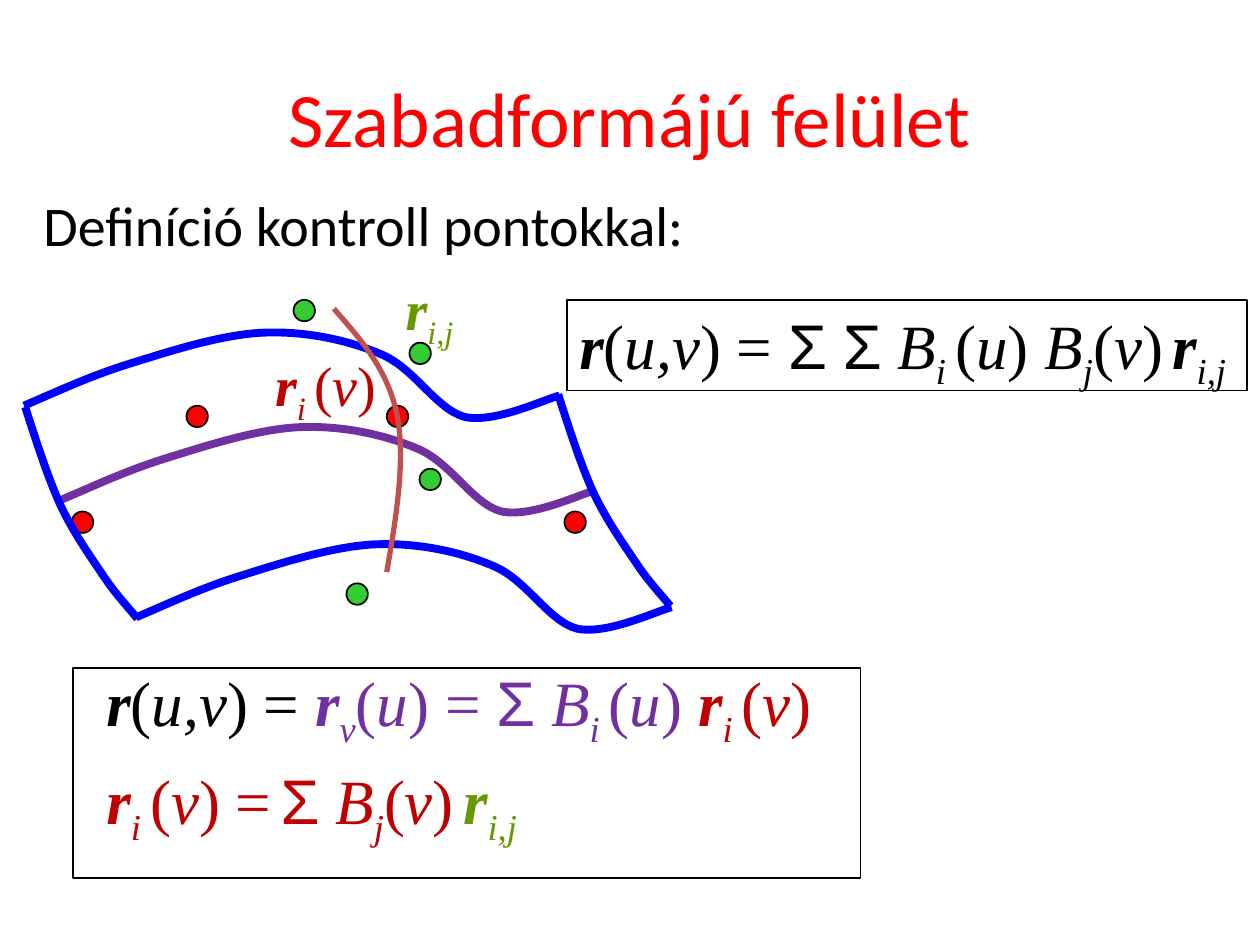
from dataclasses import dataclass

from pptx import Presentation
from pptx.dml.color import RGBColor
from pptx.enum.shapes import MSO_SHAPE as Shape
from pptx.enum.text import MSO_ANCHOR as Anchor, MSO_AUTO_SIZE as AutoSize, PP_ALIGN as Align
from pptx.oxml.ns import qn
from pptx.util import Inches, Pt


@dataclass(frozen=True)
class Theme:
    black: str = "000000"
    title: str = "FF0000"
    edge: str = "0000FF"
    row: str = "7030A0"
    column: str = "C0504D"
    curve_point: str = "C00000"
    control_point: str = "669900"
    red_dot: str = "FF0000"
    green_dot: str = "33CC33"
    body_font: str = "Calibri"
    math_font: str = "Times New Roman"
    sum_font: str = "Arial"
    title_size: int = 44
    body_size: int = 32
    formula_size: int = 36


THEME = Theme()

# Grid of 100 columns and 75 rows
WIDTH, HEIGHT = Inches(10), Inches(7.5)
COLUMN, ROW = WIDTH / 100, HEIGHT / 75
DOT = 1.7

# Bezier knots relative to the start of each curve, in columns and rows
ACROSS = [(2.6, -1.1), (5.1, -2.3), (8.3, -3.3), (11.5, -4.3), (15.8, -5.7),
          (19.2, -5.8), (22.5, -5.9), (25.7, -5.2), (28.3, -4.1), (31, -3),
          (32.7, 0.3), (35, 0.9), (37.4, 1.4), (41.3, -0.5), (42.5, -0.8)]
DOWN = [(0.9, 2.8), (1.8, 5.6), (2.8, 7.8), (3.9, 10.1), (5.2, 11.9),
        (6.2, 13.4), (7.2, 14.9), (8.1, 15.8), (8.9, 16.8)]
CROSSING = [(2.2, 2.5), (4.3, 4.9), (5, 8.4), (5.7, 11.8), (5, 16.3), (4.2, 20.9)]

RED_DOTS = [(5.7, 40.6), (14.8, 32.2), (30.7, 32.2), (44.8, 40.6)]
GREEN_DOTS = [(23.3, 23.8), (32.5, 27.2), (33.3, 37.2), (27.5, 46.3)]


# Formula parts: lists of (text, style, colour); b bold, i italic, _ subscript, s sum sign
def vector(index, colour):
    return [("r", "bi", colour), (index, "i_", colour)]


def argument(name, colour, after=""):
    return [("(", "", colour), (name, "i", colour), (")" + after, "", colour)]


def basis(index, name, colour, after=" "):
    return [("B", "i", colour), (index, "i_", colour)] + argument(name, colour, after)


def surface():
    return [("r", "bi", THEME.black)] + argument("u,v", THEME.black, " = ")


def sum_sign(colour):
    return [("Σ", "s", colour), (" ", "", colour)]


def thin_space(colour):
    return [(" ", "_", colour)]


def color(code):
    return RGBColor.from_string(code)


def place(shape, left, top, width, height):
    shape.left, shape.top = round(left * COLUMN), round(top * ROW)
    shape.width, shape.height = round(width * COLUMN), round(height * ROW)


def outline(shape, code, width):
    shape.shadow.inherit = False
    shape.line.color.rgb = color(code)
    shape.line.width = Pt(width)


def format_span(span, font, size, code):
    span.font.name, span.font.size = font, Pt(size)
    span.font.color.rgb = color(code)


def write_formula(para, parts, size):
    for text, style, code in parts:
        span = para.add_run()
        span.text = text
        format_span(span, THEME.sum_font if "s" in style else THEME.math_font, size, code)
        span.font.bold, span.font.italic = "b" in style, "i" in style
        if "_" in style:
            span.font._element.set("baseline", "-25000")


def remove_bullet(para, indent=0):
    properties = para._p.get_or_add_pPr()
    properties.set("marL", str(Inches(indent)))
    properties.set("indent", "0")
    properties.insert_element_before(
        properties.makeelement(qn("a:buNone"), {}), "a:tabLst", "a:defRPr", "a:extLst")


def add_frame(page, *cell):
    frame = page.shapes.add_shape(Shape.RECTANGLE, 0, 0, 0, 0)
    place(frame, *cell)
    frame.fill.background()
    outline(frame, THEME.black, 1)
    return frame


def fill_frame(box, parts, size, align=Align.LEFT):
    frame = box.text_frame
    frame.word_wrap = False
    frame.auto_size = AutoSize.SHAPE_TO_FIT_TEXT
    frame.vertical_anchor = Anchor.TOP
    frame.paragraphs[0].alignment = align
    write_formula(frame.paragraphs[0], parts, size)


def add_label(page, cell, parts, align=Align.LEFT):
    box = page.shapes.add_textbox(0, 0, 0, 0)
    place(box, *cell)
    fill_frame(box, parts, THEME.body_size, align)


def add_dots(page, spots, code):
    for left, top in spots:
        dot = page.shapes.add_shape(Shape.OVAL, 0, 0, 0, 0)
        place(dot, left, top, DOT, DOT)
        dot.fill.solid()
        dot.fill.fore_color.rgb = color(code)
        outline(dot, THEME.black, 1)


def add_curve(page, knots, left, top, code, width=4.5):
    points = [(round((left + x) * COLUMN), round((top + y) * ROW)) for x, y in knots]
    builder = page.shapes.build_freeform(round(left * COLUMN), round(top * ROW))
    builder.add_line_segments(points, close=False)
    curve = builder.convert_to_shape()
    # Every three line segments become one cubic Bezier segment
    lines = list(curve._element.iter(qn("a:lnTo")))
    for first in range(0, len(lines), 3):
        bezier = lines[first].makeelement(qn("a:cubicBezTo"), {})
        lines[first].addprevious(bezier)
        for line in lines[first:first + 3]:
            bezier.append(line[0])
            line.getparent().remove(line)
    curve.fill.background()
    outline(curve, code, width)


def write_title(page, text):
    title = page.shapes.title
    place(title, 5, 3, 90, 12.5)
    title.text_frame.text = text
    title.text_frame.vertical_anchor = Anchor.MIDDLE
    para = title.text_frame.paragraphs[0]
    para.alignment = Align.CENTER
    format_span(para.runs[0], THEME.body_font, THEME.title_size, THEME.title)


def write_body(page, text, formulas):
    body = page.placeholders[1]
    place(body, 2.45, 14.65, 90, 45)
    frame = body.text_frame
    frame.text = text
    frame.auto_size = AutoSize.NONE
    lead = frame.paragraphs[0]
    lead.space_before = Pt(0)
    remove_bullet(lead)
    format_span(lead.runs[0], THEME.body_font, THEME.body_size, THEME.black)
    for parts, gap in formulas:
        para = frame.add_paragraph()
        para.space_before = Pt(gap)
        remove_bullet(para, indent=0.5)
        write_formula(para, parts, THEME.formula_size)


def main():
    deck = Presentation()
    deck.slide_width, deck.slide_height = WIDTH, HEIGHT
    page = deck.slides.add_slide(deck.slide_layouts[1])
    black, row = THEME.black, THEME.row
    red, green = THEME.curve_point, THEME.control_point

    # Title, lead line and the two-step definition
    write_title(page, "Szabadformájú felület")
    row_formula = (surface() + vector("v", row) + argument("u", row, " = ") + sum_sign(row)
                   + basis("i ", "u", row) + vector("i ", red) + argument("v", red))
    point_formula = (vector("i ", red) + argument("v", red, " =") + thin_space(red)
                     + sum_sign(red) + basis("j", "v", red, "") + thin_space(red)
                     + vector("i,j", green))
    write_body(page, "Definíció kontroll pontokkal:",
               [(row_formula, 231.5), (point_formula, 7)])
    add_frame(page, 5.8, 53, 62.5, 16.7)

    # Tensor product formula
    product = (surface() + sum_sign(black) * 2 + basis("i ", "u", black)
               + basis("j", "v", black, "") + thin_space(black) + vector("i,j", black))
    fill_frame(add_frame(page, 45, 23.8, 54, 7.2), product, THEME.formula_size)

    # Surface patch with its control points
    add_dots(page, RED_DOTS, THEME.red_dot)
    for left, top, code in [(4.8, 39.7, row), (1.9, 32.2, THEME.edge), (10.8, 49, THEME.edge)]:
        add_curve(page, ACROSS, left, top, code)
    for left, top in [(44.3, 31.3), (2, 32.3)]:
        add_curve(page, DOWN, left, top, THEME.edge)
    add_curve(page, CROSSING, 26.5, 24.5, THEME.column, 3)
    add_dots(page, GREEN_DOTS, THEME.green_dot)

    # Point labels
    add_label(page, (20.7, 27.3, 10.3, 6.4), vector("i ", red) + argument("v", red), Align.CENTER)
    add_label(page, (31.2, 21.3, 6.2, 6.4), vector("i,j", green))
    deck.save("out.pptx")


if __name__ == "__main__":
    main()
